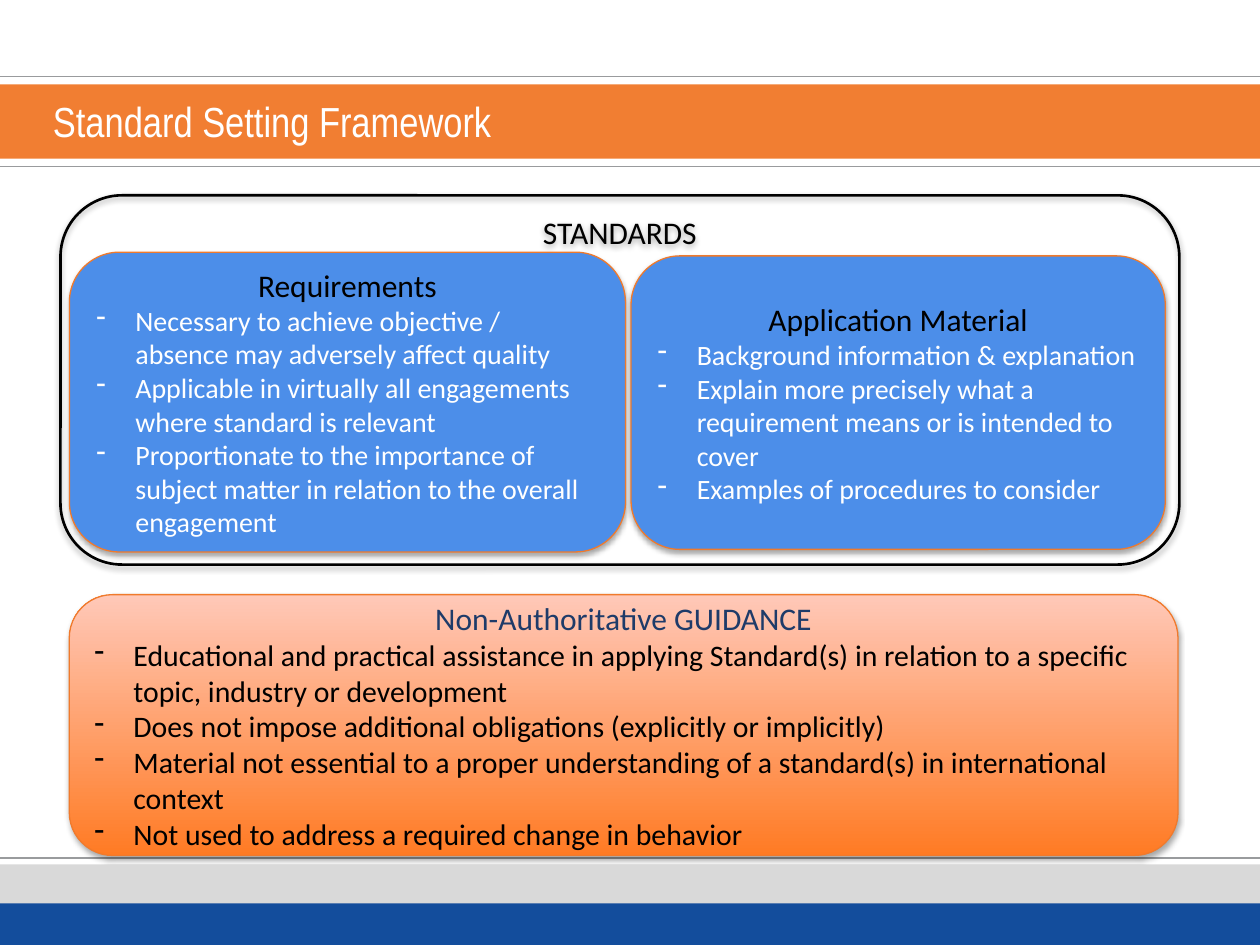
from collections import namedtuple

from lxml import etree
from pptx import Presentation
from pptx.dml.color import RGBColor
from pptx.enum.shapes import MSO_CONNECTOR, MSO_SHAPE
from pptx.enum.text import MSO_ANCHOR, PP_ALIGN
from pptx.oxml.ns import qn
from pptx.util import Inches, Pt

COLORS = {
    "orange": "F17E32", "edge": "F07A2C", "blue": "4C8EE9", "navy": "134D9C",
    "heading": "1E3B69", "grey": "D9D9D9", "rule": "999B9D",
    "flame": "FF7B24", "peach": "FFC8B8", "black": "000000", "white": "FFFFFF",
}

Box = namedtuple("Box", "left top width height")
PAGE = Box(0, 0, Inches(10), Inches(7.5))

REQUIREMENTS = [
    "Necessary to achieve objective / absence may adversely affect quality",
    "Applicable in virtually all engagements where standard is relevant",
    "Proportionate to the importance of subject matter in relation to the overall engagement",
]
APPLICATION = [
    "Background information & explanation",
    "Explain more precisely what a requirement means or is intended to cover",
    "Examples of procedures to consider",
]
GUIDANCE = [
    "Educational and practical assistance in applying Standard(s) in relation to a specific "
    "topic, industry or development",
    "Does not impose additional obligations (explicitly or implicitly)",
    "Material not essential to a proper understanding of a standard(s) in international context",
    "Not used to address a required change in behavior",
]


def color(name):
    return RGBColor.from_string(COLORS[name])


def within(box, left, top, width, height):
    """Return the part of a box given in percent of its width and height."""
    return Box(
        int(box.left + box.width * left / 100),
        int(box.top + box.height * top / 100),
        int(box.width * width / 100),
        int(box.height * height / 100),
    )


def style_text(paragraph, size, ink, font="Calibri"):
    for run in paragraph.runs:
        run.font.name = font
        run.font.size = Pt(size)
        run.font.color.rgb = color(ink)


def add_dash(paragraph):
    properties = paragraph._p.get_or_add_pPr()
    properties.set("marL", str(Inches(0.31)))
    properties.set("indent", str(-Inches(0.31)))
    etree.SubElement(properties, qn("a:buChar")).set("char", "-")


def add_soft_shadow(shape):
    shape.shadow.inherit = False
    effects = shape._element.spPr.find(qn("a:effectLst"))
    shadow = etree.SubElement(effects, qn("a:outerShdw"), blurRad="40000",
                              dist="23000", dir="5400000", rotWithShape="0")
    ink = etree.SubElement(shadow, qn("a:srgbClr"), val=COLORS["black"])
    etree.SubElement(ink, qn("a:alpha"), val="35000")


def add_rounded(slide, box, edge, edge_width):
    shape = slide.shapes.add_shape(MSO_SHAPE.ROUNDED_RECTANGLE, *box)
    shape.line.color.rgb = color(edge)
    shape.line.width = Pt(edge_width)
    add_soft_shadow(shape)
    return shape


def add_panel(slide, box, heading, points, heading_ink, point_ink, point_size):
    """Place a rounded panel with a centred heading over a dashed list."""
    panel = add_rounded(slide, box, "edge", 0.75)
    panel.fill.solid()
    panel.fill.fore_color.rgb = color("blue")
    frame = panel.text_frame
    frame.vertical_anchor = MSO_ANCHOR.MIDDLE
    frame.text = heading
    frame.paragraphs[0].alignment = PP_ALIGN.CENTER
    style_text(frame.paragraphs[0], 18, heading_ink)
    for point in points:
        paragraph = frame.add_paragraph()
        paragraph.text = point
        paragraph.alignment = PP_ALIGN.LEFT
        add_dash(paragraph)
        style_text(paragraph, point_size, point_ink)
    return panel


def add_standards(slide, box):
    add_panel(slide, within(box, 0.8, 15.4, 49.7, 81.2),
              "Requirements", REQUIREMENTS, "black", "white", 16)
    add_panel(slide, within(box, 51, 16.4, 47.75, 79.5),
              "Application Material", APPLICATION, "black", "white", 16)
    frame_shape = add_rounded(slide, box, "black", 1.5)
    frame_shape.fill.background()
    frame = frame_shape.text_frame
    frame.vertical_anchor = MSO_ANCHOR.TOP
    frame.margin_top = 0
    frame.text = "STANDARDS"
    frame.paragraphs[0].alignment = PP_ALIGN.CENTER
    style_text(frame.paragraphs[0], 18, "black")


def add_guidance(slide, box):
    panel = add_panel(slide, box, "Non-Authoritative GUIDANCE", GUIDANCE,
                      "heading", "black", 17)
    panel.fill.gradient()
    panel.fill.gradient_angle = 90
    for stop, name in zip(panel.fill.gradient_stops, ("flame", "peach")):
        stop.color.rgb = color(name)


def add_bands(slide, box):
    for name, top, height in (("grey", 91.47, 8.53), ("orange", 8.93, 7.87),
                              ("navy", 95.6, 4.4)):
        band = slide.shapes.add_shape(MSO_SHAPE.RECTANGLE, *within(box, 0, top, 100, height))
        band.shadow.inherit = False
        band.fill.solid()
        band.fill.fore_color.rgb = color(name)
        band.line.fill.background()
    for top in (8.13, 17.6, 90.8):
        line = within(box, 0, top, 100, 0)
        rule = slide.shapes.add_connector(MSO_CONNECTOR.STRAIGHT, line.left, line.top,
                                          line.left + line.width, line.top)
        rule.line.color.rgb = color("rule")
        rule.line.width = Pt(0.75)
        etree.SubElement(rule._element.spPr, qn("a:effectLst"))


def set_title(slide, box):
    """Fill the title placeholder and bring it in front of the bands."""
    title = slide.shapes.title
    title.left, title.top, title.width, title.height = box
    frame = title.text_frame
    frame.margin_left = frame.margin_right = frame.margin_top = frame.margin_bottom = 0
    frame.vertical_anchor = MSO_ANCHOR.MIDDLE
    frame.text = "Standard Setting Framework"
    frame.paragraphs[0].alignment = PP_ALIGN.LEFT
    style_text(frame.paragraphs[0], 24, "white", "Arial Narrow")
    title._element.getparent().append(title._element)


def main():
    presentation = Presentation()
    presentation.slide_width, presentation.slide_height = PAGE.width, PAGE.height
    slide = presentation.slides.add_slide(presentation.slide_layouts[5])
    add_bands(slide, PAGE)
    set_title(slide, within(PAGE, 4.2, 8.93, 82.5, 7.73))
    add_guidance(slide, within(PAGE, 5.5, 62.93, 88, 27.6))
    add_standards(slide, within(PAGE, 4.8, 20.67, 88.8, 39.07))
    presentation.save("out.pptx")


if __name__ == "__main__":
    main()
